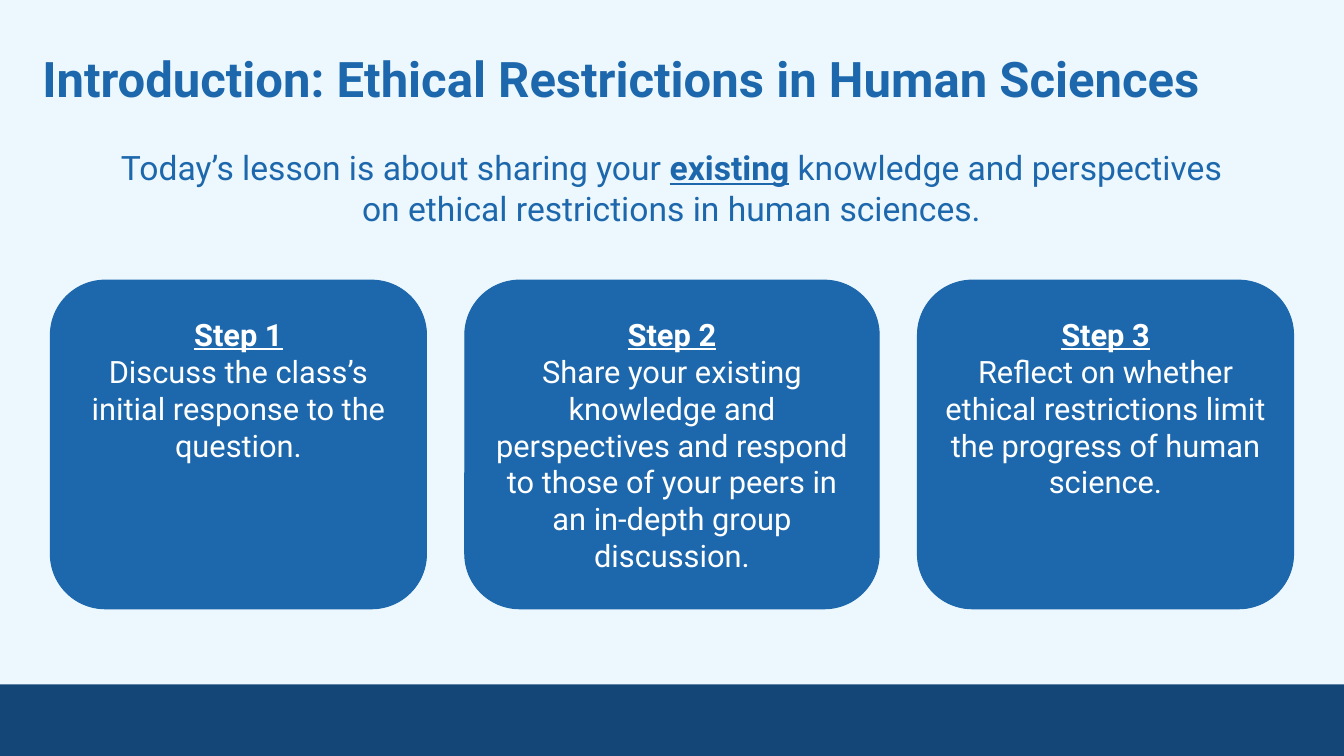
from dataclasses import dataclass

from pptx import Presentation
from pptx.dml.color import RGBColor
from pptx.enum.shapes import MSO_SHAPE
from pptx.enum.text import MSO_ANCHOR, MSO_AUTO_SIZE, PP_ALIGN
from pptx.util import Inches, Pt

RECTANGLE = MSO_SHAPE.RECTANGLE
ROUNDED_RECTANGLE = MSO_SHAPE.ROUNDED_RECTANGLE
TOP = MSO_ANCHOR.TOP
LEFT, CENTER = PP_ALIGN.LEFT, PP_ALIGN.CENTER
NO_AUTO_SIZE = MSO_AUTO_SIZE.NONE

SLIDE_WIDTH, SLIDE_HEIGHT = 13.33, 7.5
MARGIN = 0.5
CARD_TOP, CARD_HEIGHT = 2.78, 3.26
FOOTER_TOP = 6.79


@dataclass(frozen=True)
class Theme:
    font: str = "Roboto"
    background: RGBColor = RGBColor(0xEC, 0xF8, 0xFE)
    primary: RGBColor = RGBColor(0x1D, 0x67, 0xAC)
    footer: RGBColor = RGBColor(0x14, 0x47, 0x77)
    on_primary: RGBColor = RGBColor(0xFF, 0xFF, 0xFF)
    title_size: float = 35
    intro_size: float = 24
    card_size: float = 22


@dataclass(frozen=True)
class TextRun:
    text: str
    bold: bool = False
    underline: bool = False


@dataclass(frozen=True)
class Step:
    heading: str
    description: str
    width: float


THEME = Theme()
TITLE = "Introduction: Ethical Restrictions in Human Sciences"
INTRO = [
    TextRun("Today’s lesson is about sharing your "),
    TextRun("existing", bold=True, underline=True),
    TextRun(" knowledge and perspectives on ethical restrictions in human sciences."),
]
STEPS = [
    Step("Step 1", "Discuss the class’s initial response to the question.", 3.73),
    Step(
        "Step 2",
        "Share your existing knowledge and perspectives and respond "
        "to those of your peers in an in-depth group discussion.",
        4.11,
    ),
    Step(
        "Step 3",
        "Reflect on whether ethical restrictions limit the progress of human science.",
        3.73,
    ),
]


def place(shape, left: float, top: float, width: float, height: float) -> None:
    shape.left, shape.top = Inches(left), Inches(top)
    shape.width, shape.height = Inches(width), Inches(height)


def write(shape, paragraphs: list[list[TextRun]], size: float, color: RGBColor,
          alignment, inset: float, top_inset: float) -> None:
    frame = shape.text_frame
    frame.word_wrap = True
    frame.auto_size = NO_AUTO_SIZE
    frame.vertical_anchor = TOP
    frame.margin_left = frame.margin_right = frame.margin_bottom = Inches(inset)
    frame.margin_top = Inches(top_inset)
    for index, text_runs in enumerate(paragraphs):
        paragraph = frame.add_paragraph() if index else frame.paragraphs[0]
        paragraph.alignment = alignment
        paragraph.line_spacing = 1.0
        paragraph.space_before = Pt(0)
        for text_run in text_runs:
            run = paragraph.add_run()
            run.text = text_run.text
            run.font.name = THEME.font
            run.font.size = Pt(size)
            run.font.bold = text_run.bold
            run.font.underline = text_run.underline
            run.font.color.rgb = color


def add_block(slide, kind, left: float, top: float, width: float, height: float,
              color: RGBColor):
    shape = slide.shapes.add_shape(
        kind, Inches(left), Inches(top), Inches(width), Inches(height))
    shape.shadow.inherit = False
    shape.fill.solid()
    shape.fill.fore_color.rgb = color
    shape.line.color.rgb = color
    shape.line.width = Pt(0.75)
    return shape


def add_step_card(slide, step: Step, left: float) -> None:
    card = add_block(slide, ROUNDED_RECTANGLE, left, CARD_TOP, step.width,
                     CARD_HEIGHT, THEME.primary)
    card.adjustments[0] = 0.167
    paragraphs = [
        [TextRun(step.heading, bold=True, underline=True)],
        [TextRun(step.description)],
    ]
    write(card, paragraphs, THEME.card_size, THEME.on_primary, CENTER, 0.1, 0.19)


def main() -> None:
    presentation = Presentation()
    presentation.slide_width = Inches(SLIDE_WIDTH)
    presentation.slide_height = Inches(SLIDE_HEIGHT)
    slide = presentation.slides.add_slide(presentation.slide_layouts[5])
    slide.background.fill.solid()
    slide.background.fill.fore_color.rgb = THEME.background

    footer = add_block(slide, RECTANGLE, 0, FOOTER_TOP, SLIDE_WIDTH,
                       SLIDE_HEIGHT - FOOTER_TOP, THEME.footer)
    footer.line.fill.background()

    title = slide.shapes.title
    place(title, 0.29, 0.35, 12.19, 0.86)
    write(title, [[TextRun(TITLE, bold=True)]], THEME.title_size, THEME.primary,
          LEFT, 0.13, 0.13)

    intro = slide.shapes.add_textbox(0, 0, 0, 0)
    place(intro, 0.91, 1.36, 11.5, 1.82)
    write(intro, [INTRO], THEME.intro_size, THEME.primary, CENTER, 0.1, 0.1)

    free_width = SLIDE_WIDTH - 2 * MARGIN - sum(step.width for step in STEPS)
    gap = free_width / (len(STEPS) - 1)
    left = MARGIN
    for step in STEPS:
        add_step_card(slide, step, left)
        left += step.width + gap

    presentation.save("out.pptx")


if __name__ == "__main__":
    main()
